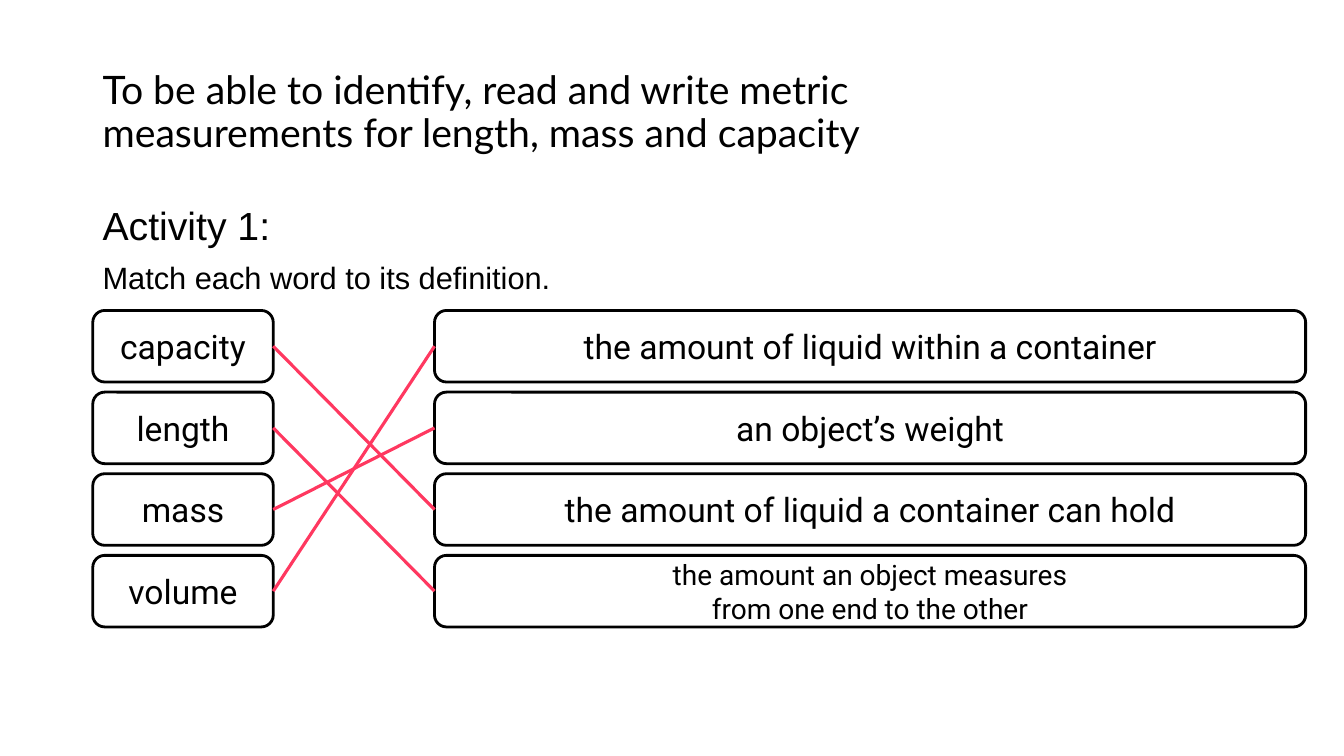
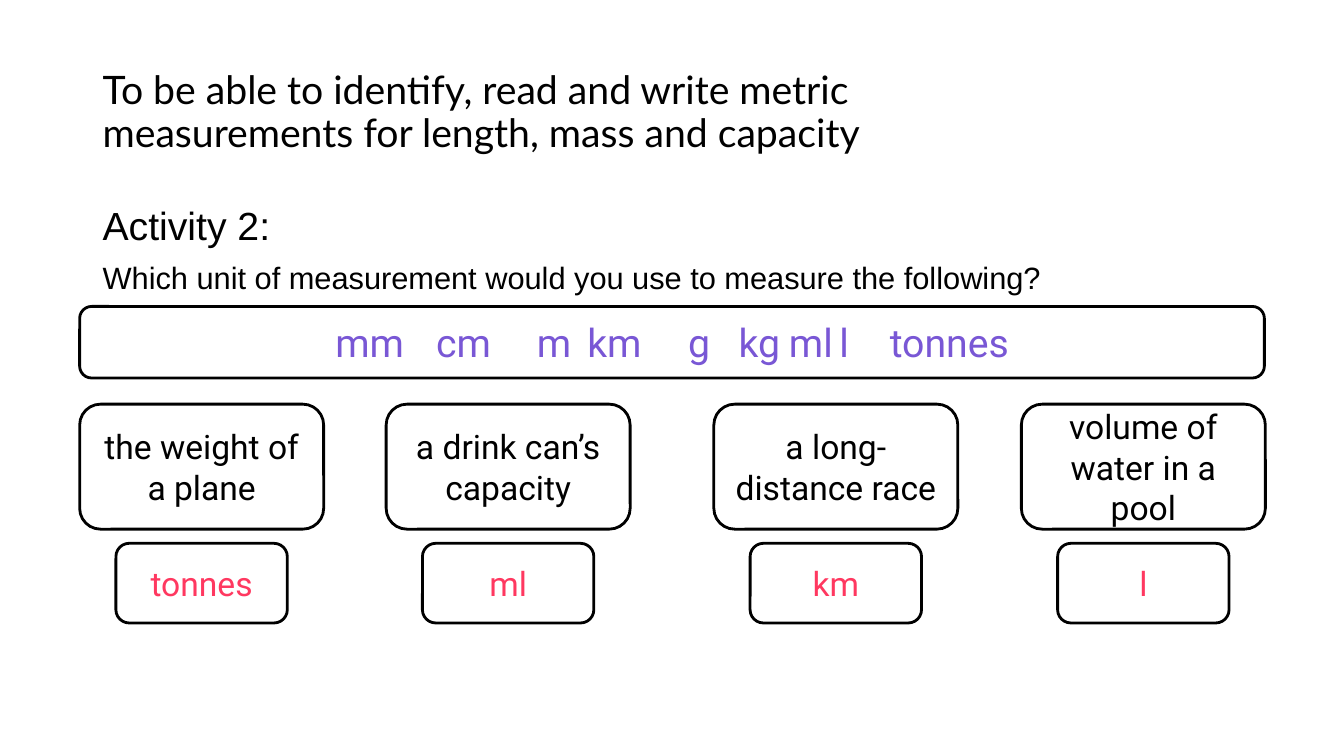
from pptx import Presentation
from pptx.dml.color import RGBColor
from pptx.enum.shapes import MSO_CONNECTOR, MSO_SHAPE
from pptx.enum.text import MSO_ANCHOR, PP_ALIGN
from pptx.oxml.ns import qn
from pptx.util import Inches, Pt
from lxml.etree import SubElement

BLACK = RGBColor(0x00, 0x00, 0x00)
WHITE = RGBColor(0xFF, 0xFF, 0xFF)
RED = RGBColor(0xFF, 0x38, 0x60)
PURPLE = RGBColor(0x79, 0x57, 0xD5)
GOAL = ("To be able to identify, read and write metric "
        "measurements for length, mass and capacity")
LEFT_SITE, RIGHT_SITE = 1, 3

PAIRS = [
    ("capacity", "the amount of liquid within a container", 24, 2),
    ("length", "an object’s weight", 24, 3),
    ("mass", "the amount of liquid a container can hold", 24, 1),
    ("volume", "the amount an object measures\nfrom one end to the other", 20, 0),
]
UNITS = ["mm", "cm", "m", "km", "g", "kg", "ml", "l", "tonnes"]
ITEMS = [
    (0.79, "the weight of a plane", "tonnes"),
    (3.83, "a drink can’s capacity", "ml"),
    (7.08, "a long-distance race", "km"),
    (10.13, "volume of water in a pool", "l"),
]


def add_run(para, text, size, font, color=BLACK):
    run = para.add_run()
    run.text = text
    run.font.size = Pt(size)
    run.font.name = font
    run.font.color.rgb = color


def add_text(slide, box, lines, font, anchor):
    frame = slide.shapes.add_textbox(*map(Inches, box)).text_frame
    frame.word_wrap = True
    frame.vertical_anchor = anchor
    for i, (text, size) in enumerate(lines):
        para = frame.add_paragraph() if i else frame.paragraphs[0]
        para.line_spacing = 0.9
        if i:
            para.space_before = Pt(10)
        add_run(para, text, size, font)


def add_card(slide, box, text, size=24, color=BLACK):
    card = slide.shapes.add_shape(MSO_SHAPE.ROUNDED_RECTANGLE, *map(Inches, box))
    card.shadow.inherit = False
    card.fill.solid()
    card.fill.fore_color.rgb = WHITE
    card.line.color.rgb = BLACK
    card.line.width = Pt(2)
    frame = card.text_frame
    frame.word_wrap = True
    frame.vertical_anchor = MSO_ANCHOR.MIDDLE
    para = frame.paragraphs[0]
    para.alignment = PP_ALIGN.CENTER
    for i, line in enumerate(text.split("\n")):
        if i:
            para.add_line_break()
        add_run(para, line, size, "Roboto", color)
    return card


def add_link(slide, start, end):
    link = slide.shapes.add_connector(MSO_CONNECTOR.STRAIGHT, 0, 0, 0, 0)
    link.begin_connect(start, RIGHT_SITE)
    link.end_connect(end, LEFT_SITE)
    link.line.color.rgb = RED
    link.line.width = Pt(2.25)
    SubElement(link._element.spPr, qn("a:effectLst"))


def add_page(deck, number, task):
    slide = deck.slides.add_slide(deck.slide_layouts[6])
    add_text(slide, (0.92, 0.4, 9.6, 1.45), [(GOAL, 28)], "Lato", MSO_ANCHOR.MIDDLE)
    add_text(slide, (0.92, 2, 11.5, 1), [(f"Activity {number}:", 28), (task, 22)],
             "Arial", MSO_ANCHOR.TOP)
    return slide


def add_match(slide, left, top, width):
    high, step, shift = 0.71, 0.81, 3.39
    words, means = [], []
    for i, (word, mean, size, _) in enumerate(PAIRS):
        y = top + i * step
        words.append(add_card(slide, (left, y, 1.79, high), word))
        means.append(add_card(slide, (left + shift, y, width - shift, high), mean, size))
    for word, (*_, goal) in zip(words, PAIRS):
        add_link(slide, word, means[goal])


def add_item(slide, left, top, item, answer):
    wide, small = 2.42, 1.7
    add_card(slide, (left, top, wide, 1.24), item)
    add_card(slide, (left + (wide - small) / 2, top + 1.38, small, 0.79), answer, color=RED)


def main():
    deck = Presentation()
    deck.slide_width, deck.slide_height = Inches(13.33), Inches(7.5)

    slide = add_page(deck, 1, "Match each word to its definition.")
    add_match(slide, 0.92, 3.08, 12.03)

    slide = add_page(deck, 2, "Which unit of measurement would you use to measure the following?")
    add_card(slide, (0.79, 3.04, 11.75, 0.71), "\t".join(UNITS), 28, PURPLE)
    for left, item, answer in ITEMS:
        add_item(slide, left, 4.01, item, answer)

    deck.save("out.pptx")


if __name__ == "__main__":
    main()
